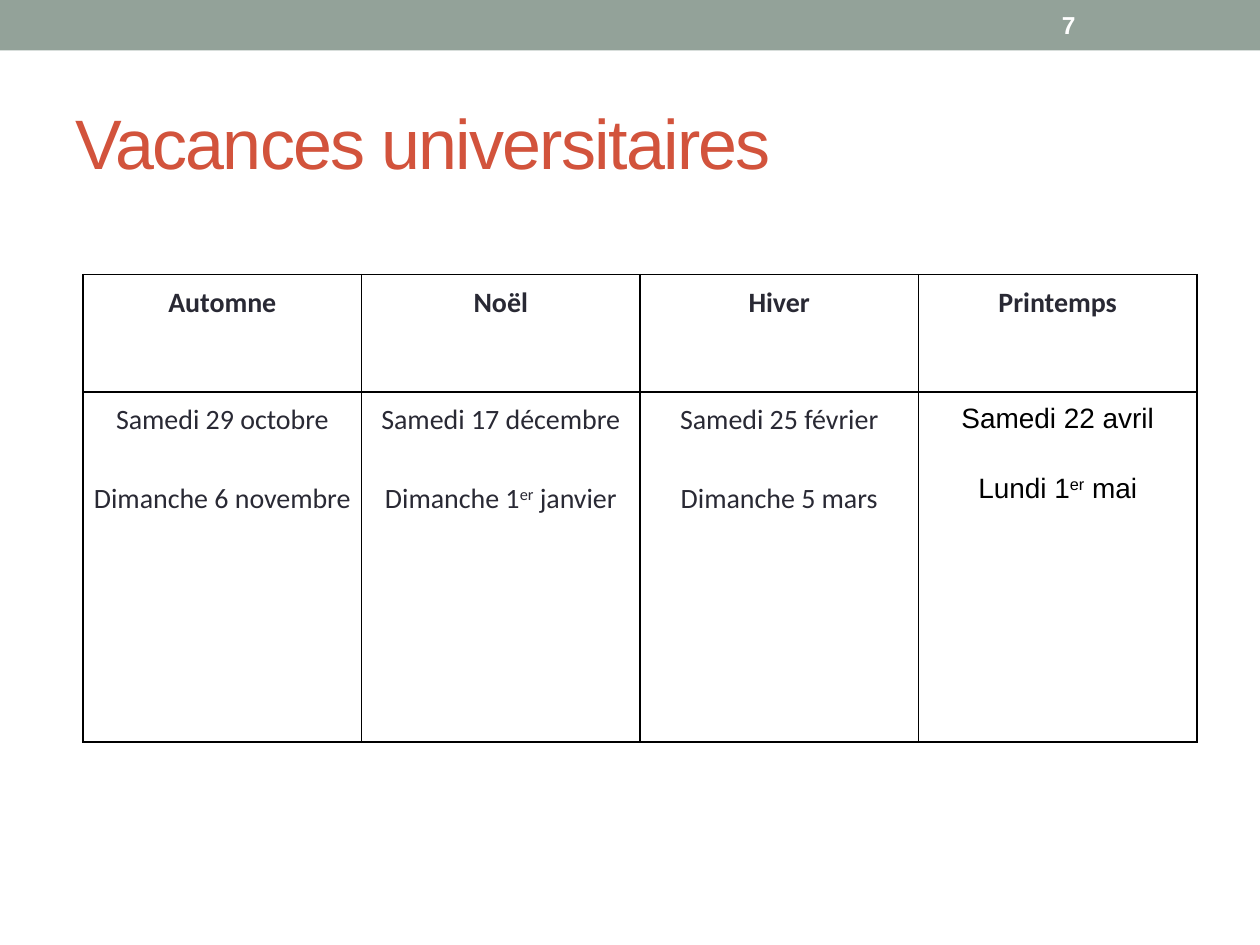
from dataclasses import dataclass

from lxml import etree
from pptx import Presentation
from pptx.dml.color import RGBColor
from pptx.enum.shapes import MSO_SHAPE
from pptx.enum.text import MSO_ANCHOR, PP_ALIGN
from pptx.oxml.ns import qn
from pptx.util import Inches, Pt

RECTANGLE = MSO_SHAPE.RECTANGLE
MIDDLE = MSO_ANCHOR.MIDDLE
LEFT, CENTER = PP_ALIGN.LEFT, PP_ALIGN.CENTER


@dataclass(frozen=True)
class Theme:
    band: str = "93A299"
    title: str = "D2533C"
    ink: str = "292934"
    black: str = "000000"
    white: str = "FFFFFF"
    heading_font: str = "Arial"
    table_font: str = "Calibri"
    title_size: int = 40
    number_size: int = 14
    table_size: int = 16
    border_width: float = 0.96


theme = Theme()


def style(para, font, size, color, bold=False, align=LEFT):
    para.alignment = align
    para.font.name = font
    para.font.size = Pt(size)
    para.font.bold = bold
    para.font.color.rgb = RGBColor.from_string(color)


def add_borders(cell):
    properties = cell._tc.get_or_add_tcPr()
    for side in ("a:lnL", "a:lnR", "a:lnT", "a:lnB"):
        line = etree.SubElement(properties, qn(side), w=str(Pt(theme.border_width)))
        fill = etree.SubElement(line, qn("a:solidFill"))
        etree.SubElement(fill, qn("a:srgbClr"), val=theme.black)


deck = Presentation()
deck.slide_width, deck.slide_height = Inches(10), Inches(7.5)
page = deck.slides.add_slide(deck.slide_layouts[5])

# Top band
band = page.shapes.add_shape(RECTANGLE, 0, 0, deck.slide_width, Inches(0.4))
band.shadow.inherit = False
band.fill.solid()
band.fill.fore_color.rgb = RGBColor.from_string(theme.band)
band.line.fill.background()

# Title
title = page.shapes.title
title.left, title.top = Inches(0.5), Inches(0.58)
title.width, title.height = Inches(9), Inches(1.08)
title.text_frame.vertical_anchor = MIDDLE
para = title.text_frame.paragraphs[0]
style(para, theme.heading_font, theme.title_size, theme.title)
span = para.add_run()
span.text = "Vacances universitaires"
span.font._element.set("spc", "-100")

# Page number
box = page.shapes.add_textbox(Inches(8.33), Inches(0.02), Inches(1.17), Inches(0.36))
box.text_frame.word_wrap = True
box.text_frame.vertical_anchor = MIDDLE
para = box.text_frame.paragraphs[0]
para.text = "7"
style(para, theme.heading_font, theme.number_size, theme.white, bold=True)

# Holidays: name, first day, last day split around its superscript, font, colour, gap
holidays = [
    ("Automne", "Samedi 29 octobre", ["Dimanche 6 novembre"],
     theme.table_font, theme.ink, 22.5),
    ("Noël", "Samedi 17 décembre", ["Dimanche 1", "er", " janvier"],
     theme.table_font, theme.ink, 22.5),
    ("Hiver", "Samedi 25 février", ["Dimanche 5 mars"],
     theme.table_font, theme.ink, 22.5),
    ("Printemps", "Samedi 22 avril", ["Lundi 1", "er", " mai"],
     theme.heading_font, theme.black, 20),
]
frame = page.shapes.add_table(2, len(holidays), Inches(0.66), Inches(2.18),
                              Inches(8.83), Inches(3.7))
table = frame.table
table.first_row = table.horz_banding = False
table.rows[0].height, table.rows[1].height = Inches(0.93), Inches(2.78)

for cell in table.iter_cells():
    add_borders(cell)
    cell.fill.background()
    cell.margin_left = cell.margin_right = Inches(0.07)
    cell.margin_top = cell.margin_bottom = Inches(0.05)

for column, (name, first_day, last_day, font, color, gap) in enumerate(holidays):
    table.columns[column].width = Inches(2.21)

    heading = table.cell(0, column).text_frame.paragraphs[0]
    heading.text = name
    heading.line_spacing = 1.15
    style(heading, theme.table_font, theme.table_size, theme.ink, True, CENTER)

    dates = table.cell(1, column).text_frame
    start, end = dates.paragraphs[0], dates.add_paragraph()
    start.text = first_day
    end.space_before = Pt(gap)
    for index, piece in enumerate(last_day):
        span = end.add_run()
        span.text = piece
        if index == 1:
            span.font._element.set("baseline", "30000")
    for para in (start, end):
        para.line_spacing = 1.15
        style(para, font, theme.table_size, color, align=CENTER)

deck.save("out.pptx")
